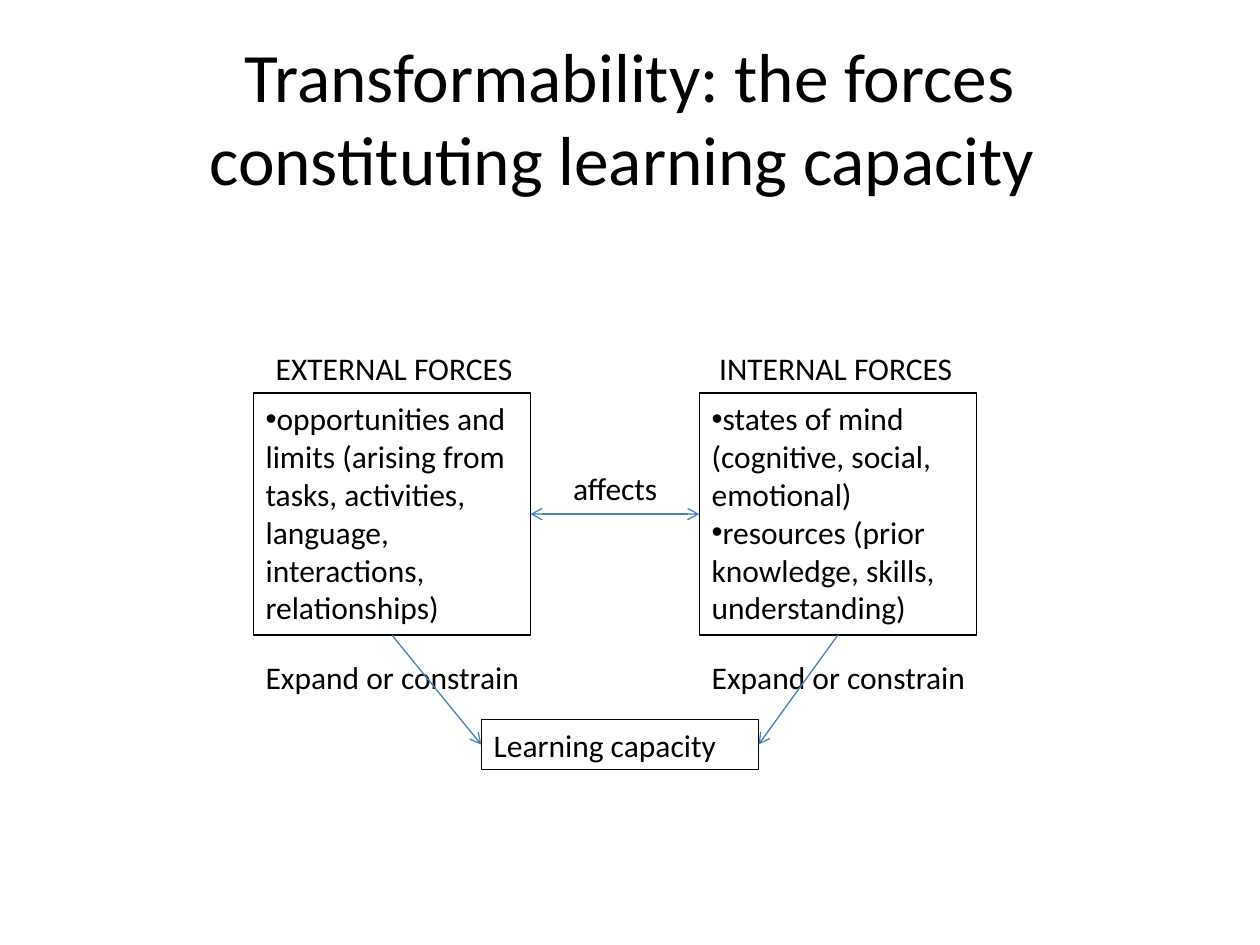
"""Build a slide showing the forces that constitute learning capacity."""
from lxml import etree
from pptx import Presentation
from pptx.dml.color import RGBColor
from pptx.enum.shapes import MSO_CONNECTOR, MSO_SHAPE
from pptx.enum.text import MSO_ANCHOR, PP_ALIGN
from pptx.oxml.ns import qn
from pptx.util import Inches, Pt

RECTANGLE = MSO_SHAPE.RECTANGLE
STRAIGHT = MSO_CONNECTOR.STRAIGHT
TOP, MIDDLE = MSO_ANCHOR.TOP, MSO_ANCHOR.MIDDLE
LEFT, CENTER = PP_ALIGN.LEFT, PP_ALIGN.CENTER


def color(value):
    return RGBColor.from_string(value)


def write(box, lines, size=18, align=LEFT, anchor=TOP, wrap=True, bullet=False):
    frame = box.text_frame
    frame.word_wrap = wrap
    frame.vertical_anchor = anchor
    frame.text = "\n".join(lines)
    for para in frame.paragraphs:
        if bullet:
            properties = para._p.get_or_add_pPr()
            etree.SubElement(properties, qn("a:buFont"), typeface="Arial")
            etree.SubElement(properties, qn("a:buChar"), char="•")
        para.alignment = align
        para.font.name = "Calibri"
        para.font.size = Pt(size)
        para.font.color.rgb = color("000000")


deck = Presentation()
deck.slide_width = Inches(10)
deck.slide_height = Inches(7.5)
slide = deck.slides.add_slide(deck.slide_layouts[6])
shapes = slide.shapes

title = shapes.add_textbox(Inches(0.5), Inches(0.3), Inches(9), Inches(1.25))
write(title, ["Transformability: the forces constituting learning capacity "],
      size=39.6, align=CENTER, anchor=MIDDLE)

external_left, internal_left, capacity_left = 2.01, 5.55, 3.82
box_width, force_top, force_height = 2.2, 3.12, 1.92
force_bottom = force_top + force_height
force_middle = force_top + force_height / 2
external_right = external_left + box_width
capacity_right = capacity_left + box_width
capacity_top, capacity_height = 5.71, 0.4
capacity_middle = capacity_top + capacity_height / 2

labels = [
    ("EXTERNAL FORCES", 2.09, 2.72, 2.1, False),
    ("INTERNAL FORCES", 5.61, 2.72, 2.07, False),
    ("affects", 4.45, 3.67, 1.1, True),
    ("Expand or constrain", external_left, 5.17, 2.36, True),
    ("Expand or constrain", internal_left, 5.17, 2.36, True),
]
for text, left, top, width, wrap in labels:
    label = shapes.add_textbox(Inches(left), Inches(top), Inches(width), Inches(0.4))
    write(label, [text], wrap=wrap)

boxes = [
    (external_left, force_top, force_height, True,
     ["opportunities and limits (arising from tasks, activities, language, "
      "interactions, relationships)"]),
    (internal_left, force_top, force_height, True,
     ["states of mind (cognitive, social, emotional)",
      "resources (prior knowledge, skills, understanding)"]),
    (capacity_left, capacity_top, capacity_height, False, ["Learning capacity"]),
]
for left, top, height, bullet, lines in boxes:
    box = shapes.add_shape(RECTANGLE, Inches(left), Inches(top),
                           Inches(box_width), Inches(height))
    box.shadow.inherit = False
    box.fill.background()
    box.line.color.rgb = color("000000")
    box.line.width = Pt(0.75)
    write(box, lines, bullet=bullet)

arrows = [
    (external_right, force_middle, internal_left, force_middle, ["headEnd", "tailEnd"]),
    (internal_left + box_width / 2, force_bottom, capacity_right, capacity_middle, ["tailEnd"]),
    (external_left + box_width / 2, force_bottom, capacity_left, capacity_middle, ["tailEnd"]),
]
for start_x, start_y, end_x, end_y, ends in arrows:
    arrow = shapes.add_connector(STRAIGHT, Inches(start_x), Inches(start_y),
                                 Inches(end_x), Inches(end_y))
    arrow.line.color.rgb = color("4B7EBC")
    arrow.line.width = Pt(0.75)
    for end in ends:
        etree.SubElement(arrow.line._get_or_add_ln(), qn(f"a:{end}"), type="arrow")
    etree.SubElement(arrow._element.spPr, qn("a:effectLst"))

deck.save("out.pptx")
